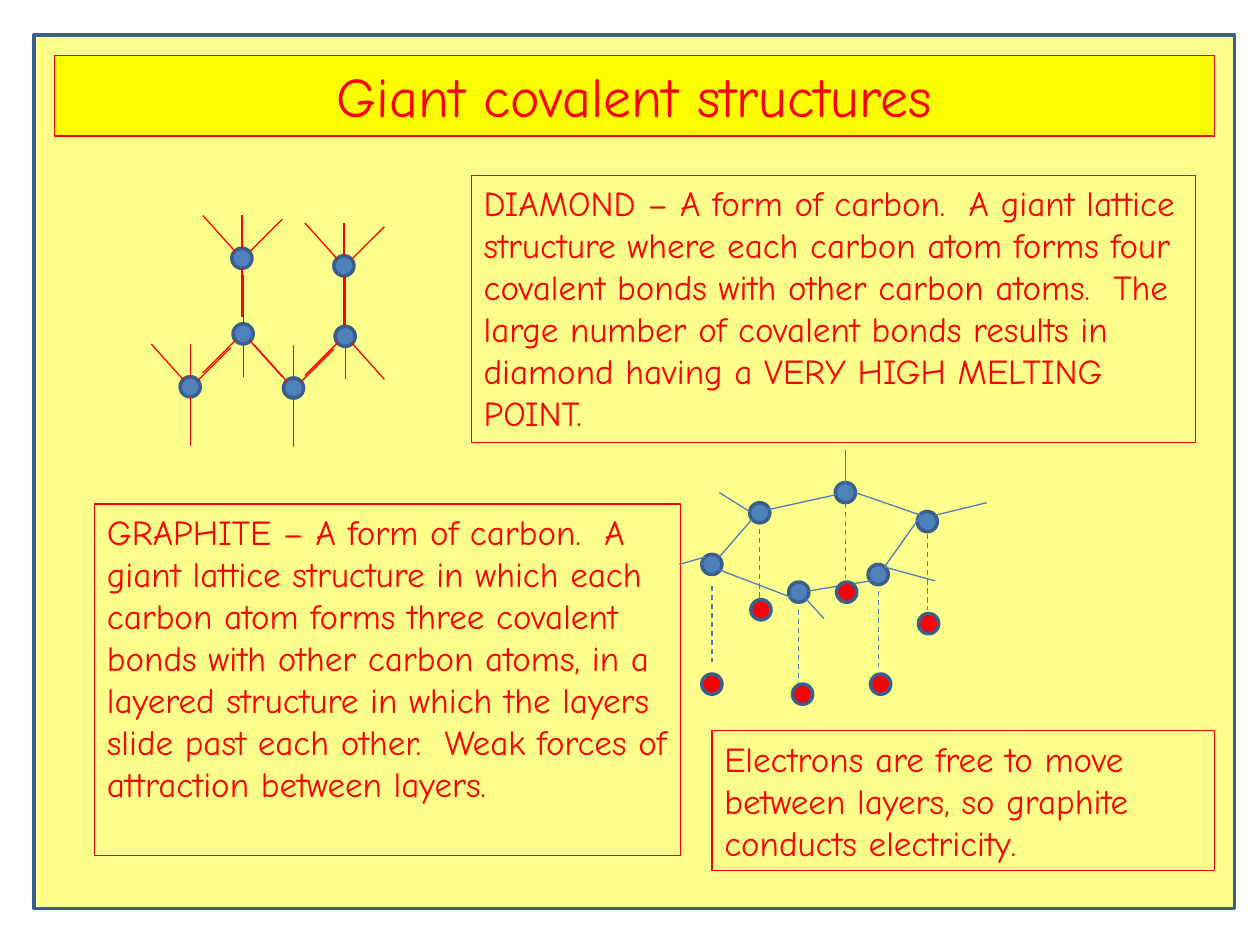
from dataclasses import dataclass

from lxml import etree
from pptx import Presentation, util as u
from pptx.dml.color import RGBColor as Rgb
from pptx.enum import dml, shapes, text
from pptx.oxml import ns

PX = 9144  # EMU in one px, 100 px to the inch


@dataclass(frozen=True)
class Theme:
    font: str = "Comic Neue"
    head: int = 32
    body: int = 20
    red: str = "FF0000"
    blue: str = "4F81BD"
    bond: str = "4B7EBC"
    edge: str = "3A5F8C"
    page: str = "FFFF8B"
    band: str = "FFFF00"
    thin: float = 0.75
    thick: float = 2


class Board:
    def __init__(self, slide, theme):
        self.slide = slide
        self.theme = theme

    def paint(self, shape, fill, edge, width):
        if fill:
            shape.fill.solid()
            shape.fill.fore_color.rgb = Rgb.from_string(fill)
        else:
            shape.fill.background()
        shape.line.color.rgb = Rgb.from_string(edge)
        shape.line.width = u.Pt(width)

    def label(self, shape, words, size, align):
        frame = shape.text_frame
        frame.word_wrap = True
        frame.auto_size = text.MSO_AUTO_SIZE.NONE
        frame.vertical_anchor = text.MSO_ANCHOR.TOP
        para = frame.paragraphs[0]
        para.alignment = align
        run = para.add_run()
        run.text = words
        run.font.name = self.theme.font
        run.font.size = u.Pt(size)
        run.font.color.rgb = Rgb.from_string(self.theme.red)

    def panel(self, x, y, w, h):
        box = self.slide.shapes.add_shape(
            shapes.MSO_SHAPE.RECTANGLE, x * PX, y * PX, w * PX, h * PX)
        box.shadow.inherit = False
        self.paint(box, self.theme.page, self.theme.edge, self.theme.thick)
        # Panel goes behind the title
        self.slide.shapes.title._element.addprevious(box._element)

    def title(self, x, y, w, h, words):
        box = self.slide.shapes.title
        box.left, box.top, box.width, box.height = (n * PX for n in (x, y, w, h))
        self.paint(box, self.theme.band, self.theme.red, self.theme.thin)
        self.label(box, words, self.theme.head, text.PP_ALIGN.CENTER)

    def note(self, x, y, w, h, words):
        box = self.slide.shapes.add_textbox(x * PX, y * PX, w * PX, h * PX)
        self.paint(box, None, self.theme.red, self.theme.thin)
        self.label(box, words, self.theme.body, text.PP_ALIGN.LEFT)

    def group(self):
        return self.slide.shapes.add_group_shape()

    def ball(self, x, y, fill, group=None):
        home = (group or self.slide).shapes
        dot = home.add_shape(shapes.MSO_SHAPE.OVAL,
                             (x - 8) * PX, (y - 8) * PX, 16 * PX, 16 * PX)
        dot.shadow.inherit = False
        self.paint(dot, fill, self.theme.edge, self.theme.thick)

    def bond(self, x1, y1, x2, y2, color, group=None, dash=False):
        home = (group or self.slide).shapes
        bar = home.add_connector(shapes.MSO_CONNECTOR.STRAIGHT,
                                 x1 * PX, y1 * PX, x2 * PX, y2 * PX)
        bar.line.color.rgb = Rgb.from_string(color)
        bar.line.width = u.Pt(self.theme.thin)
        if dash:
            bar.line.dash_style = dml.MSO_LINE.DASH
        etree.SubElement(bar._element.spPr, ns.qn("a:effectLst"))

    def carbon(self, x, y, turn):
        """Atom with four bonds; turn is 1 upright, -1 upside down."""
        group = self.group()
        self.ball(x, y, self.theme.blue, group)
        for x1, y1, x2, y2 in ARMS:
            self.bond(x + turn * x1, y + turn * y1,
                      x + turn * x2, y + turn * y2, self.theme.red, group)


# Bonds of one diamond atom, from its centre
ARMS = [(-6, 5, -32, 31), (5, 5, 31, 34), (0, -47, 0, -8), (0, 8, 0, 34)]
DIAMOND = [(193, 265, 1), (233, 308, -1), (274, 267, 1),
           (273, 211, -1), (192, 205, -1), (151, 307, -1)]

# Graphite: upper layer, its ring, and the bonds leaving it
ATOMS = [(565, 448), (603, 407), (671, 391), (736, 414), (634, 470), (697, 456)]
RING = [(571, 442, 597, 412), (603, 406, 671, 391), (679, 391, 731, 409),
        (731, 409, 702, 450), (557, 447, 633, 476), (642, 469, 691, 461)]
OUTER = [(742, 409, 783, 399), (671, 393, 671, 357), (595, 406, 571, 391),
         (702, 450, 742, 461), (634, 469, 654, 491), (560, 442, 539, 448)]
# Weak forces (x, top) and the lower layer
FORCES = [(565, 465), (603, 420), (634, 484), (697, 469), (736, 424), (671, 399)]
LOWER = [(565, 543), (637, 551), (699, 543), (737, 495), (604, 484), (672, 470)]


def main():
    deck = Presentation()
    deck.slide_width, deck.slide_height = 1000 * PX, 750 * PX
    theme = Theme()
    board = Board(deck.slides.add_slide(deck.slide_layouts[5]), theme)

    # Page and title
    board.panel(27, 28, 953, 693)
    board.title(43, 44, 921, 64, "Giant covalent structures")

    # Diamond
    for x, y, turn in DIAMOND:
        board.carbon(x, y, turn)
    board.note(374, 139, 575, 212,
               "DIAMOND – A form of carbon.  A giant lattice structure where "
               "each carbon atom forms four covalent bonds with other carbon "
               "atoms.  The large number of covalent bonds results in diamond "
               "having a VERY HIGH MELTING POINT.")

    # Graphite layers
    layer = board.group()
    for x, y in ATOMS:
        board.ball(x, y, theme.blue, layer)
    for ends in RING:
        board.bond(*ends, theme.bond)
    for x, top in FORCES:
        board.bond(x, top, x, top + 60, theme.bond, dash=True)
    for x, y in LOWER:
        board.ball(x, y, theme.red)
    board.note(75, 400, 465, 279,
               "GRAPHITE – A form of carbon.  A giant lattice structure in "
               "which each carbon atom forms three covalent bonds with other "
               "carbon atoms, in a layered structure in which the layers slide "
               "past each other.  Weak forces of attraction between layers.")
    for ends in OUTER:
        board.bond(*ends, theme.bond)

    # Conductivity
    board.note(565, 580, 399, 111,
               "Electrons are free to move between layers, so graphite "
               "conducts electricity.")
    deck.save("out.pptx")


if __name__ == "__main__":
    main()
